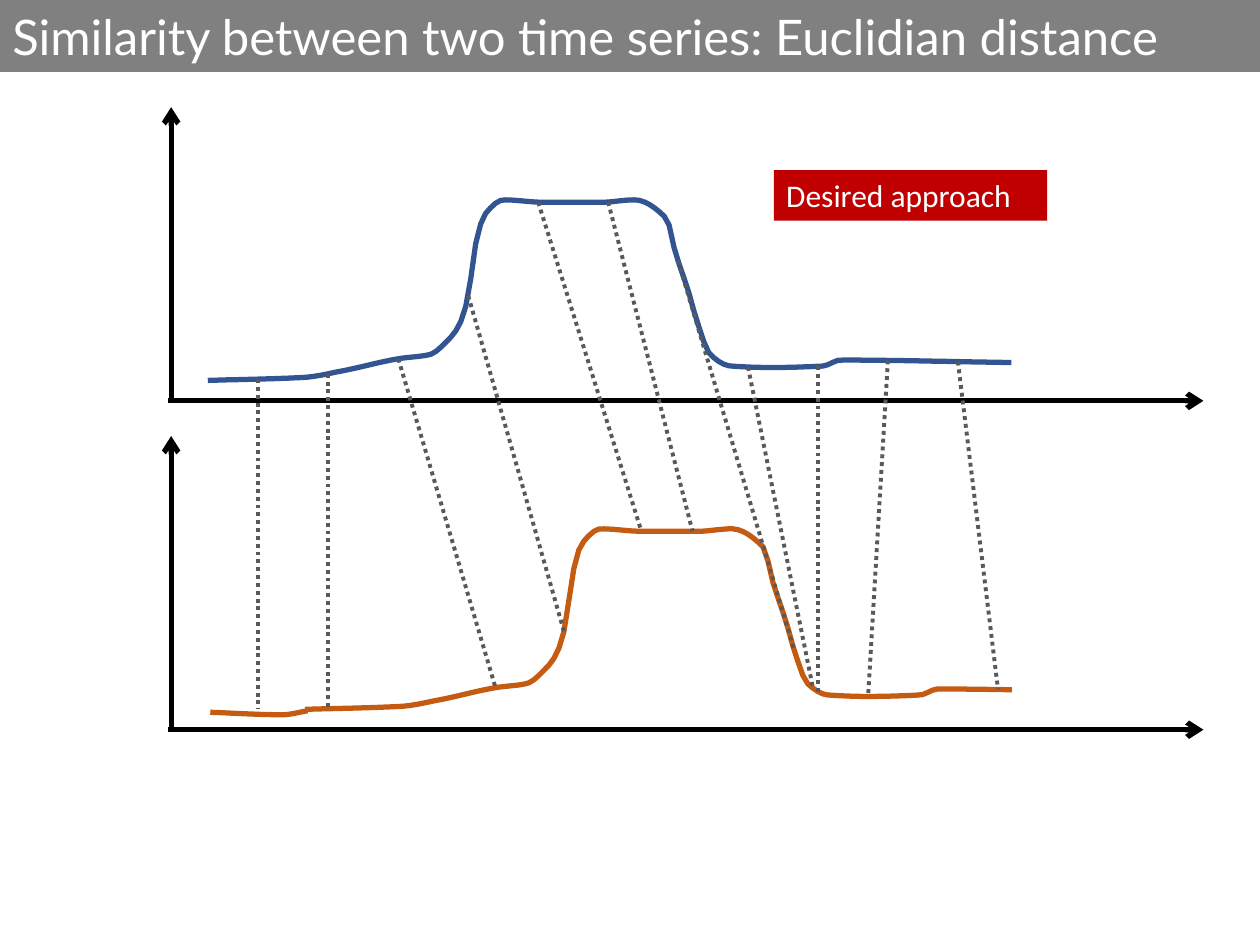
import pptx
import pptx.util
import pptx.dml.color
import pptx.enum.dml
import pptx.enum.shapes
import pptx.enum.text
import pptx.oxml.ns
from itertools import pairwise
from lxml import etree
from pptx.util import Cm

APPROACH = [(0, 3.64), (1.93, 3.58), (2.7, 3.45), (3.86, 3.2)]
CLIMB = [(4.47, 3.12), (4.85, 2.82), (5.06, 2.54), (5.23, 2.03), (5.41, 0.84), (5.58, 0.3)]
PLATEAU = [(5.97, 0), (6.78, 0.05), (7.92, 0.05), (8.6, 0)]
DESCENT = [(9.25, 0.38), (9.42, 1.04), (9.7, 1.88), (9.86, 2.44), (10.13, 3.12)]
TAIL = [(10.54, 3.35), (11.35, 3.38), (12.4, 3.35), (12.75, 3.23), (16.2, 3.28)]
SERIES = APPROACH + CLIMB + PLATEAU + DESCENT + TAIL
LEAD_IN = [(0, 0.03), (1.45, 0.08), (1.96, 0)]

PANEL_LEFT, PANEL_WIDTH, PANEL_HEIGHT = 3.38, 20.88, 5.92
UPPER_TOP, LOWER_TOP = 2.16, 8.79
UPPER_SERIES_LEFT, LOWER_SERIES_LEFT = 4.19, 6.15
UPPER_SERIES_LENGTH, LOWER_SERIES_LENGTH = 16.2, 14.25
SERIES_INSET = 1.87
FIRST_MATCH, MATCH_STEP = 5.21, 1.41
MATCH_LAGS = [0, 0, 1.96, 1.93, 2.08, 1.7, 2.34, 1.31, 0, -0.4, 0.81]
SAMPLE_STEP = 0.1


def color(hex_string):
    return pptx.dml.color.RGBColor.from_string(hex_string)


def knot_slopes(knots):
    steps = [(y2 - y1) / (x2 - x1) for (x1, y1), (x2, y2) in pairwise(knots)]
    inner = [2 * a * b / (a + b) if a * b > 0 else 0 for a, b in pairwise(steps)]
    return [steps[0], *inner, steps[-1]]


def smooth_height(knots, x):
    x = min(max(x, knots[0][0]), knots[-1][0])
    slopes = knot_slopes(knots)
    for ((x1, y1), (x2, y2)), (slope1, slope2) in zip(pairwise(knots), pairwise(slopes)):
        if x <= x2:
            span = x2 - x1
            t = (x - x1) / span
            blend = t * t * (3 - 2 * t)
            bend = t * (1 - t) * ((1 - t) * slope1 - t * slope2)
            return y1 + (y2 - y1) * blend + span * bend


def add_label(slide, left, top, width, height, fill, text, font_name, size):
    shape = slide.shapes.add_shape(
        pptx.enum.shapes.MSO_SHAPE.RECTANGLE, Cm(left), Cm(top), Cm(width), Cm(height))
    shape.shadow.inherit = False
    shape.fill.solid()
    shape.fill.fore_color.rgb = color(fill)
    shape.line.fill.background()
    shape.text_frame.word_wrap = True
    shape.text_frame.vertical_anchor = pptx.enum.text.MSO_ANCHOR.TOP
    paragraph = shape.text_frame.paragraphs[0]
    paragraph.text = text
    paragraph.alignment = pptx.enum.text.PP_ALIGN.LEFT
    paragraph.font.name = font_name
    paragraph.font.size = pptx.util.Pt(size)
    paragraph.font.color.rgb = color("FFFFFF")


def add_line(slide, start, end, line_color, width):
    connector = slide.shapes.add_connector(
        pptx.enum.shapes.MSO_CONNECTOR.STRAIGHT, *(Cm(length) for length in (*start, *end)))
    connector.line.color.rgb = color(line_color)
    connector.line.width = pptx.util.Pt(width)
    etree.SubElement(connector._element.spPr, pptx.oxml.ns.qn("a:effectLst"))
    return connector


def add_axis(slide, start, end):
    connector = add_line(slide, start, end, "000000", 3)
    line = connector.line._get_or_add_ln()
    etree.SubElement(line, pptx.oxml.ns.qn("a:tailEnd"), type="arrow")


def add_curve(slide, left, top, length, knots, line_color):
    count = round(length / SAMPLE_STEP)
    samples = [length * index / count for index in range(count + 1)]
    points = [(Cm(left + x), Cm(top + smooth_height(knots, x))) for x in samples]
    builder = slide.shapes.build_freeform(*points[0])
    builder.add_line_segments(points[1:], close=False)
    shape = builder.convert_to_shape()
    shape.shadow.inherit = False
    shape.fill.background()
    shape.line.color.rgb = color(line_color)
    shape.line.width = pptx.util.Pt(3)


def add_series_panel(slide, left, top, width, height, series_left, series_length, line_color):
    bottom = top + height
    axis_x = left + 0.07
    add_curve(slide, series_left, top + SERIES_INSET, series_length, SERIES, line_color)
    add_axis(slide, (left, bottom), (left + width, bottom))
    add_axis(slide, (axis_x, bottom), (axis_x, top))


def add_matches(slide, upper_left, upper_top, lower_left, lower_top):
    for index, lag in enumerate(MATCH_LAGS):
        start_x = FIRST_MATCH + MATCH_STEP * index
        end_x = start_x + lag
        start_y = upper_top + smooth_height(SERIES, start_x - upper_left)
        end_y = lower_top + smooth_height(SERIES, end_x - lower_left)
        connector = add_line(slide, (start_x, start_y), (end_x, end_y), "595959", 2.25)
        connector.line.dash_style = pptx.enum.dml.MSO_LINE.ROUND_DOT


def main():
    presentation = pptx.Presentation()
    presentation.slide_width = Cm(25.4)
    presentation.slide_height = Cm(19.05)
    slide = presentation.slides.add_slide(presentation.slide_layouts[6])

    add_label(slide, 0, 0, 25.4, 1.45, "808080",
              "Similarity between two time series: Euclidian distance", "Lato", 28)
    for top, series_left, series_length, line_color in (
        (UPPER_TOP, UPPER_SERIES_LEFT, UPPER_SERIES_LENGTH, "325491"),
        (LOWER_TOP, LOWER_SERIES_LEFT, LOWER_SERIES_LENGTH, "C55A11"),
    ):
        add_series_panel(slide, PANEL_LEFT, top, PANEL_WIDTH, PANEL_HEIGHT,
                         series_left, series_length, line_color)
    add_curve(slide, 4.24, LOWER_TOP + 5.54, LEAD_IN[-1][0], LEAD_IN, "C55A11")
    add_matches(slide, UPPER_SERIES_LEFT, UPPER_TOP + SERIES_INSET,
                LOWER_SERIES_LEFT, LOWER_TOP + SERIES_INSET)
    add_label(slide, 15.6, 3.43, 5.51, 1.02, "C00000", "Desired approach", "Calibri", 18)
    presentation.save("out.pptx")


if __name__ == "__main__":
    main()
